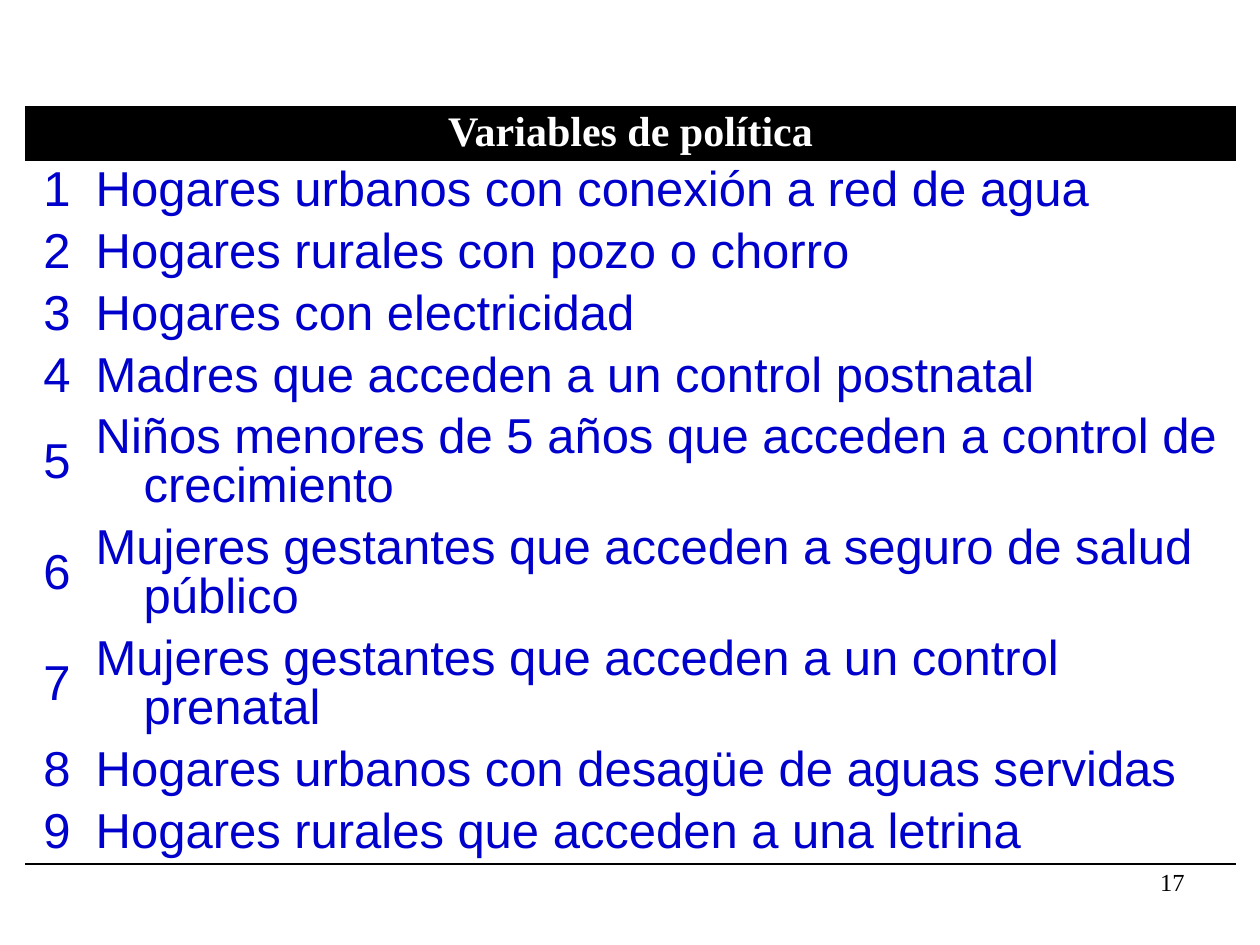
from dataclasses import dataclass

from lxml import etree
from pptx import Presentation
from pptx.dml.color import RGBColor
from pptx.enum.text import MSO_ANCHOR, PP_ALIGN
from pptx.oxml.ns import qn
from pptx.table import Table, _Cell
from pptx.text.text import _Paragraph
from pptx.util import Inches, Pt

LEFT, CENTER, RIGHT = PP_ALIGN.LEFT, PP_ALIGN.CENTER, PP_ALIGN.RIGHT
MIDDLE = MSO_ANCHOR.MIDDLE
BLANK_LAYOUT = 6
PLAIN_STYLE = "{2D5ABB26-0587-4C30-8999-92F81FD0307C}"
HANGING = Inches(0.38)
HEADING_HEIGHT = Inches(0.44)
ONE_LINE, TWO_LINES = Inches(0.49), Inches(0.88)
COLUMN_WIDTHS = (Inches(0.46), Inches(9.15))


@dataclass(frozen=True)
class TextStyle:
    """Font and alignment of one kind of text."""

    font: str
    size: int
    color: str
    align: PP_ALIGN
    bold: bool = False


@dataclass(frozen=True)
class Variable:
    """A policy variable and the height of its row."""

    name: str
    height: int = ONE_LINE


HEADING = TextStyle("Times New Roman", 24, "FFFFFF", CENTER, True)
NUMBER = TextStyle("Arial", 28, "0000CC", RIGHT)
VARIABLE = TextStyle("Arial", 28, "0000CC", LEFT)
PAGE_NUMBER = TextStyle("Times New Roman", 14, "000000", RIGHT)
VARIABLES = (
    Variable("Hogares urbanos con conexión a red de agua"),
    Variable("Hogares rurales con pozo o chorro"),
    Variable("Hogares con electricidad"),
    Variable("Madres que acceden a un control postnatal"),
    Variable("Niños menores de 5 años que acceden a control de crecimiento", TWO_LINES),
    Variable("Mujeres gestantes que acceden a seguro de salud público", TWO_LINES),
    Variable("Mujeres gestantes que acceden a un control prenatal", TWO_LINES),
    Variable("Hogares urbanos con desagüe de aguas servidas"),
    Variable("Hogares rurales que acceden a una letrina"),
)


def rgb(value: str) -> RGBColor:
    """Turn a hex string into a colour."""
    return RGBColor.from_string(value)


def write(para: _Paragraph, text: str, style: TextStyle) -> None:
    """Put styled text into a paragraph."""
    para.text = text
    para.alignment = style.align
    for span in para.runs:
        span.font.name = style.font
        span.font.size = Pt(style.size)
        span.font.bold = style.bold
        span.font.color.rgb = rgb(style.color)


def fill_cell(cell: _Cell, text: str, style: TextStyle) -> None:
    """Write a clear, vertically centred cell with a hanging indent."""
    cell.fill.background()
    cell.vertical_anchor = MIDDLE
    cell.margin_left = cell.margin_right = Inches(0.1)
    cell.margin_top = cell.margin_bottom = Inches(0.01)
    para = cell.text_frame.paragraphs[0]
    write(para, text, style)
    para.line_spacing = 0.9
    properties = para._p.get_or_add_pPr()
    properties.set("marL", str(HANGING))
    properties.set("indent", str(-HANGING))


def underline_cell(cell: _Cell, color: str) -> None:
    """Draw a one point bottom border."""
    properties = cell._tc.get_or_add_tcPr()
    border = etree.Element(qn("a:lnB"), w=str(Pt(1)))
    solid = etree.SubElement(border, qn("a:solidFill"))
    etree.SubElement(solid, qn("a:srgbClr"), val=color)
    properties.insert(0, border)


def remove_table_style(table: Table) -> None:
    """Switch to the style without grid or banding."""
    table.first_row = table.horz_banding = False
    table._tbl.tblPr.find(qn("a:tableStyleId")).text = PLAIN_STYLE


def main() -> None:
    """Build the slide of policy variables."""
    deck = Presentation()
    deck.slide_width, deck.slide_height = Inches(10), Inches(7.5)
    page = deck.slides.add_slide(deck.slide_layouts[BLANK_LAYOUT])

    box = page.shapes.add_textbox(Inches(7.17), Inches(6.83), Inches(2.33), Inches(0.52))
    box.text_frame.word_wrap = True
    write(box.text_frame.paragraphs[0], "17", PAGE_NUMBER)

    heights = [HEADING_HEIGHT] + [variable.height for variable in VARIABLES]
    table = page.shapes.add_table(
        len(heights), len(COLUMN_WIDTHS), Inches(0.2), Inches(0.84),
        sum(COLUMN_WIDTHS), sum(heights),
    ).table
    remove_table_style(table)
    for column, width in zip(table.columns, COLUMN_WIDTHS):
        column.width = width
    for row, height in zip(table.rows, heights):
        row.height = height

    heading = table.cell(0, 0)
    heading.merge(table.cell(0, 1))
    fill_cell(heading, "Variables de política", HEADING)
    heading.fill.solid()
    heading.fill.fore_color.rgb = rgb("000000")

    for number, variable in enumerate(VARIABLES, start=1):
        fill_cell(table.cell(number, 0), str(number), NUMBER)
        fill_cell(table.cell(number, 1), variable.name, VARIABLE)
    for column in range(len(COLUMN_WIDTHS)):
        underline_cell(table.cell(len(VARIABLES), column), "000000")

    deck.save("out.pptx")


if __name__ == "__main__":
    main()
